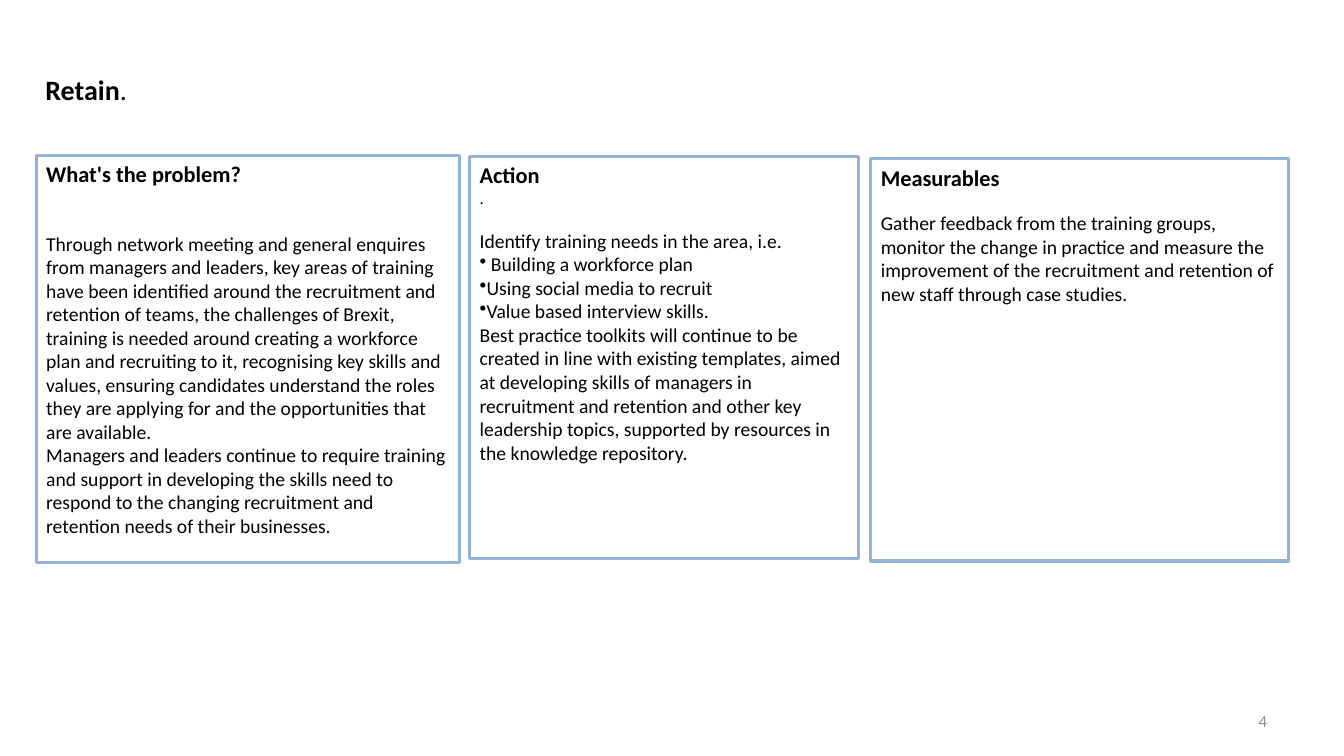
import pptx
import pptx.util
import pptx.dml.color
import pptx.enum.shapes
import pptx.enum.text
import lxml.etree

Pt = pptx.util.Pt
RGBColor = pptx.dml.color.RGBColor
Align = pptx.enum.text.PP_ALIGN
Anchor = pptx.enum.text.MSO_ANCHOR

BLACK = RGBColor(0x00, 0x00, 0x00)
GREY = RGBColor(0x8C, 0x8C, 0x8C)
BORDER_BLUE = RGBColor(0x95, 0xB3, 0xD7)

HEADING = {"size": Pt(16), "bold": True}
BODY = {"size": Pt(14), "bold": False}
SMALL = {"size": Pt(12), "bold": False}


def add_run(paragraph, text, font_format, color=BLACK):
    run = paragraph.add_run()
    run.text = text
    run.font.name = "Calibri"
    run.font.color.rgb = color
    for name, value in font_format.items():
        setattr(run.font, name, value)


def add_bullet(paragraph):
    """Put a bullet directly before the text, with no indent."""
    properties = paragraph._p.get_or_add_pPr()
    properties.set("marL", "0")
    properties.set("indent", "0")
    bullet = lxml.etree.SubElement(properties, pptx.oxml.ns.qn("a:buChar"))
    bullet.set("char", "•")


# Each panel: left, top, width, height, then its paragraphs as
# (text, font format, space before in points, bulleted)
PANELS = [
    (25.9, 110.9, 302.4, 290.9, [
        ("What's the problem?", HEADING, 0, False),
        ("Through network meeting and general enquires from managers and leaders, "
         "key areas of training have been identified around the recruitment and "
         "retention of teams, the challenges of Brexit, training is needed around "
         "creating a workforce plan and recruiting to it, recognising key skills "
         "and values, ensuring candidates understand the roles they are applying "
         "for and the opportunities that are available.", BODY, 31.7, False),
        ("Managers and leaders continue to require training and support in "
         "developing the skills need to respond to the changing recruitment and "
         "retention needs of their businesses.", BODY, 0, False),
    ]),
    (335.5, 111.6, 277.9, 287.3, [
        ("Action", HEADING, 0, False),
        (".", SMALL, 0, False),
        ("Identify training needs in the area, i.e.", BODY, 14.6, False),
        (" Building a workforce plan", BODY, 0, True),
        ("Using social media to recruit", BODY, 0, True),
        ("Value based interview skills.", BODY, 0, True),
        ("Best practice toolkits will continue to be created in line with existing "
         "templates, aimed at developing skills of managers in recruitment and "
         "retention and other key leadership topics, supported by resources in the "
         "knowledge repository.", BODY, 0, False),
    ]),
    (622.1, 113.4, 298.1, 287.3, [
        ("Measurables", HEADING, 0, False),
        ("Gather feedback from the training groups, monitor the change in practice "
         "and measure the improvement of the recruitment and retention of new staff "
         "through case studies.", BODY, 14.6, False),
    ]),
]

presentation = pptx.Presentation()
presentation.slide_width = Pt(960)
presentation.slide_height = Pt(540)
slide = presentation.slides.add_slide(presentation.slide_layouts[5])

title = slide.shapes.title
title.left, title.top, title.width, title.height = Pt(25.2), Pt(48.2), Pt(612), Pt(31.7)
title.text_frame.vertical_anchor = Anchor.TOP
title.text_frame.auto_size = pptx.enum.text.MSO_AUTO_SIZE.NONE
heading = title.text_frame.paragraphs[0]
heading.alignment = Align.LEFT
add_run(heading, "Retain", {"size": Pt(20), "bold": True})
add_run(heading, ".", {"size": Pt(20), "bold": False})

for left, top, width, height, paragraphs in PANELS:
    panel = slide.shapes.add_shape(
        pptx.enum.shapes.MSO_SHAPE.RECTANGLE, Pt(left), Pt(top), Pt(width), Pt(height))
    panel.shadow.inherit = False
    panel.fill.background()
    panel.line.color.rgb = BORDER_BLUE
    panel.line.width = Pt(2.25)
    frame = panel.text_frame
    frame.word_wrap = True
    frame.vertical_anchor = Anchor.TOP
    for index, (text, font_format, space_before, bulleted) in enumerate(paragraphs):
        paragraph = frame.add_paragraph() if index else frame.paragraphs[0]
        paragraph.alignment = Align.LEFT
        paragraph.space_before = Pt(space_before)
        if bulleted:
            add_bullet(paragraph)
        add_run(paragraph, text, font_format)

page_number = slide.shapes.add_textbox(Pt(688.3), Pt(500.4), Pt(223.9), Pt(28.8))
page_number.text_frame.word_wrap = True
page_number.text_frame.vertical_anchor = Anchor.MIDDLE
page_number.text_frame.paragraphs[0].alignment = Align.RIGHT
add_run(page_number.text_frame.paragraphs[0], "4", SMALL, GREY)

presentation.save("out.pptx")
